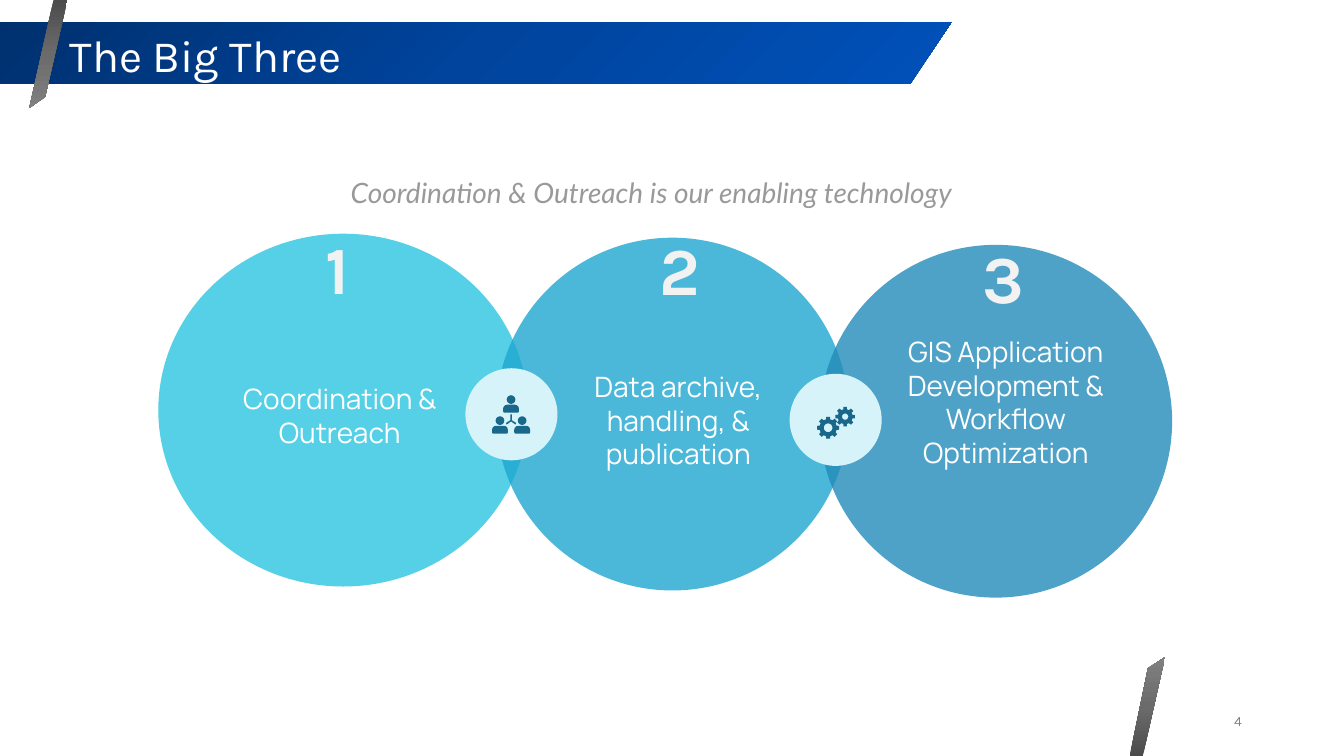
from copy import deepcopy
from dataclasses import dataclass
from math import cos, radians, sin

from lxml.etree import SubElement
from pptx import Presentation
from pptx.dml.color import RGBColor
from pptx.enum.shapes import MSO_SHAPE
from pptx.enum.text import MSO_ANCHOR, MSO_AUTO_SIZE, PP_ALIGN
from pptx.oxml.ns import qn
from pptx.util import Cm, Pt


@dataclass(frozen=True)
class Theme:
    banner: tuple = ("00306E", "00449D", "0051BA")
    slash: tuple = ("4C4C4C", "6B6B6B", "808080")
    circles: tuple = ("2BC5E0", "20A7D0", "228BB9")
    badge: str = "D5F3F9"
    icon: str = "19688B"
    white: str = "FFFFFF"
    numeral: str = "F2F2F2"
    caption: str = "999999"
    page_number: str = "808080"
    heading_font: str = "Karla"
    caption_font: str = "Lato"
    label_font: str = "Manrope"
    title_size: int = 32
    numeral_size: int = 48
    body_size: int = 20
    page_number_size: int = 10


class SlidePainter:
    """Draws elements on one page; all lengths are in centimetres."""

    def __init__(self, page, theme):
        self.page = page
        self.theme = theme

    def set_text(self, frame, words, font, size, color, align=PP_ALIGN.LEFT,
                 anchor=MSO_ANCHOR.TOP, bold=False, italic=False):
        frame.word_wrap = True
        frame.vertical_anchor = anchor
        para = frame.paragraphs[0]
        para.text = words
        para.alignment = align
        para.font.name = font
        para.font.size = Pt(size)
        para.font.bold = bold
        para.font.italic = italic
        para.font.color.rgb = RGBColor.from_string(color)
        return para

    def title(self, words, left, top, width, height):
        title = self.page.shapes.title
        title.left, title.top = Cm(left), Cm(top)
        title.width, title.height = Cm(width), Cm(height)
        title.text_frame.auto_size = MSO_AUTO_SIZE.NONE
        para = self.set_text(title.text_frame, words, self.theme.heading_font,
                             self.theme.title_size, self.theme.white,
                             anchor=MSO_ANCHOR.MIDDLE)
        para.line_spacing = 0.9
        # Bring the title in front of the banner
        title._element.getparent().append(title._element)

    def text(self, words, left, top, width, height, *style, **options):
        box = self.page.shapes.add_textbox(Cm(left), Cm(top), Cm(width), Cm(height))
        self.set_text(box.text_frame, words, *style, **options)

    def paint(self, shape, color, opacity=100):
        shape.shadow.inherit = False
        shape.line.fill.background()
        shape.fill.solid()
        shape.fill.fore_color.rgb = RGBColor.from_string(color)
        if opacity < 100:
            tone = shape._element.spPr.find(qn("a:solidFill")).find(qn("a:srgbClr"))
            SubElement(tone, qn("a:alpha"), val=str(opacity * 1000))

    def preset(self, kind, left, top, width, height, color, opacity=100):
        shape = self.page.shapes.add_shape(kind, Cm(left), Cm(top), Cm(width), Cm(height))
        self.paint(shape, color, opacity)
        return shape

    def outline(self, *contours):
        """Builds one freeform from closed contours; inner ones become holes."""
        first, *holes = [[(Cm(x), Cm(y)) for x, y in points] for points in contours]
        builder = self.page.shapes.build_freeform(*first[0])
        builder.add_line_segments(first[1:])
        for hole in holes:
            builder.move_to(*hole[0])
            builder.add_line_segments(hole[1:])
        return builder.convert_to_shape()

    def gradient_outline(self, points, colors, angle):
        shape = self.outline(points)
        shape.shadow.inherit = False
        shape.line.fill.background()
        shape.fill.gradient()
        shape.fill.gradient_angle = angle
        stop_list = shape._element.spPr.find(qn("a:gradFill")).find(qn("a:gsLst"))
        stop_list.append(deepcopy(stop_list[-1]))
        for index, (stop, color) in enumerate(zip(shape.fill.gradient_stops, colors)):
            stop.position = index / (len(colors) - 1)
            stop.color.rgb = RGBColor.from_string(color)

    def badge(self, left, top):
        self.preset(MSO_SHAPE.OVAL, left, top, 2.32, 2.32, self.theme.badge)

    def person(self, x, y):
        """Draws a head centred on (x, y) with shoulders below it."""
        self.preset(MSO_SHAPE.OVAL, x - 0.11, y - 0.11, 0.22, 0.22, self.theme.icon)
        shoulders = self.preset(MSO_SHAPE.ROUND_2_SAME_RECTANGLE, x - 0.2, y + 0.13,
                                0.4, 0.2, self.theme.icon)
        shoulders.adjustments[0] = 0.5
        shoulders.adjustments[1] = 0.2

    def fork(self, x, y):
        """Draws the branching line that joins three people."""
        right = [(0.02, 0), (0.02, 0.15), (0.13, 0.22), (0.11, 0.26), (0, 0.18)]
        left = [(-dx, dy) for dx, dy in reversed(right[:-1])]
        points = [(x + dx, y + dy) for dx, dy in right + left]
        self.paint(self.outline(points), self.theme.icon)

    def gear(self, x, y, outer, body, hole):
        def polar(radius, degrees):
            return x + radius * cos(radians(degrees)), y + radius * sin(radians(degrees))

        tooth = ((-14, body), (-10, outer), (10, outer), (14, body))
        rim = [polar(radius, turn + offset)
               for turn in range(0, 360, 45) for offset, radius in tooth]
        bore = [polar(hole, degrees) for degrees in range(360, 0, -15)]
        self.paint(self.outline(rim, bore), self.theme.icon)


def main():
    theme = Theme()
    deck = Presentation()
    deck.slide_width, deck.slide_height = Cm(33.87), Cm(19.05)
    page = deck.slides.add_slide(deck.slide_layouts[5])
    painter = SlidePainter(page, theme)

    painter.gradient_outline([(-0.2, 0.56), (23.98, 0.56), (22.94, 2.11), (-0.2, 2.11)],
                             theme.banner, 315)
    painter.gradient_outline([(1.35, 0), (0.74, 2.72), (1.14, 2.44), (1.7, 0)],
                             theme.slash, 270)
    painter.gradient_outline([(28.8, 19.05), (29.36, 16.56), (28.93, 16.84), (28.47, 19.05)],
                             theme.slash, 90)
    painter.title("The Big Three", 1.5, 0.69, 21.56, 1.52)
    painter.text("4", 23.93, 17.65, 7.62, 1.02, theme.heading_font,
                 theme.page_number_size, theme.page_number,
                 align=PP_ALIGN.RIGHT, anchor=MSO_ANCHOR.MIDDLE)
    painter.text("Coordination & Outreach is our enabling technology",
                 3.2, 4.29, 26.44, 1.12, theme.caption_font, theme.body_size,
                 theme.caption, align=PP_ALIGN.CENTER, italic=True)

    circles = [(3.99, 5.89, 9.32), (12.5, 5.99, 8.89), (20.65, 6.17, 8.89)]
    for (left, top, width), color in zip(circles, theme.circles):
        painter.preset(MSO_SHAPE.OVAL, left, top, width, 8.89, color, opacity=80)

    labels = [
        ("Coordination & Outreach", 5.21, 9.5, 6.71, 1.96),
        ("Data archive, handling, & publication", 13.97, 9.19, 6.25, 2.82),
        ("GIS Application Development & Workflow Optimization", 22.43, 8.31, 5.84, 4.52),
    ]
    for label in labels:
        painter.text(*label, theme.label_font, theme.body_size, theme.white,
                     align=PP_ALIGN.CENTER)

    painter.badge(11.73, 9.28)
    for x, y in [(12.88, 10.07), (12.6, 10.6), (13.16, 10.6)]:
        painter.person(x, y)
    painter.fork(12.88, 10.44)

    painter.badge(19.9, 9.42)
    painter.gear(20.87, 10.78, outer=0.28, body=0.22, hole=0.11)
    painter.gear(21.3, 10.5, outer=0.25, body=0.19, hole=0.08)

    numerals = [(7.95, 5.61, 1.37), (16.36, 5.64, 1.42), (24.51, 5.82, 1.75)]
    for number, (left, top, width) in enumerate(numerals, start=1):
        painter.text(str(number), left, top, width, 2.31, theme.heading_font,
                     theme.numeral_size, theme.numeral, bold=True)

    deck.save("out.pptx")


if __name__ == "__main__":
    main()
